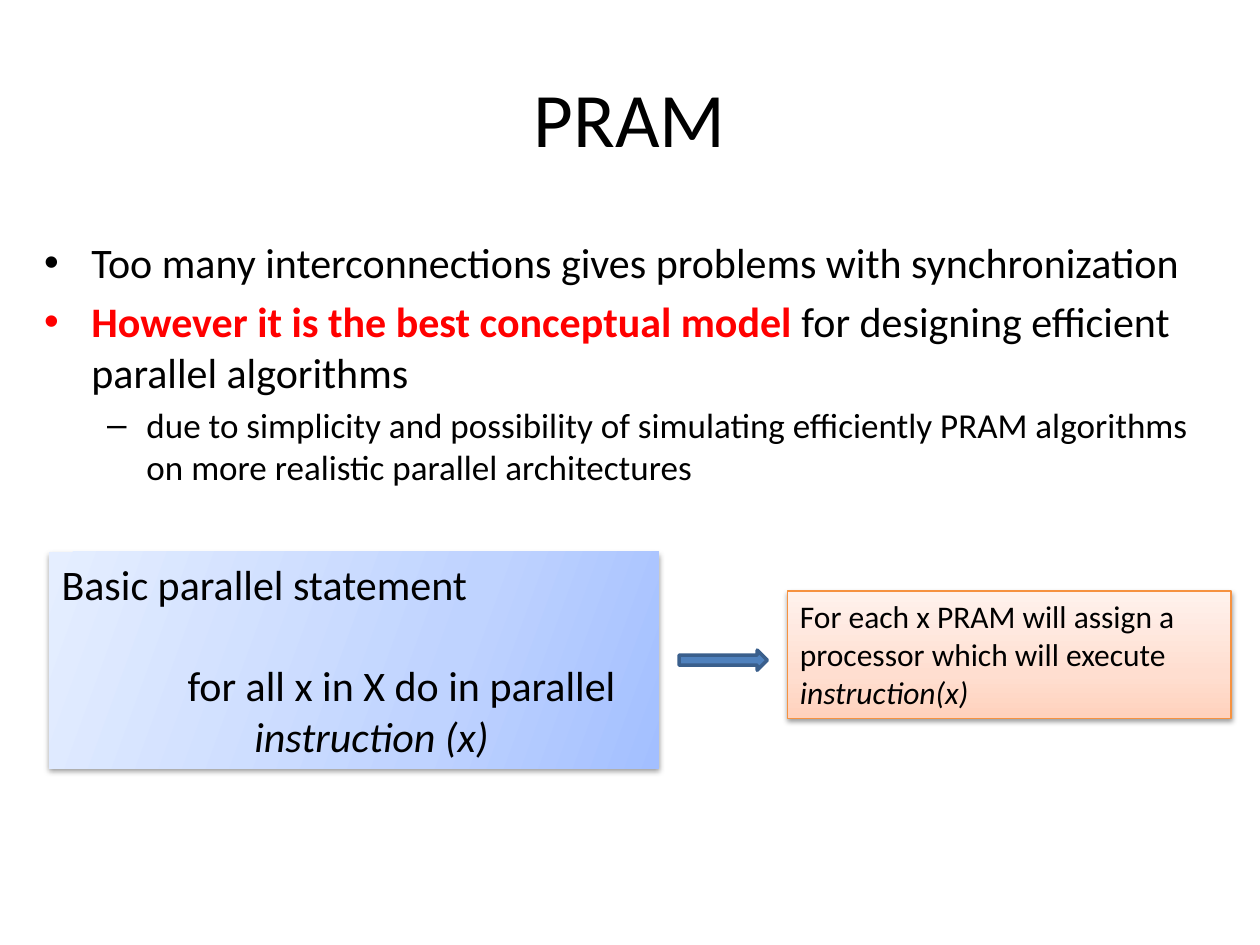
from lxml import etree
from pptx import Presentation
from pptx.dml.color import RGBColor
from pptx.enum import shapes, text
from pptx.oxml import ns
from pptx.util import Inches, Pt

BLACK = RGBColor(0x00, 0x00, 0x00)
RED = RGBColor(0xFF, 0x00, 0x00)
BLUE = RGBColor(0x4F, 0x81, 0xBD)
DARK_BLUE = RGBColor(0x3A, 0x5F, 0x8C)
ORANGE = RGBColor(0xF6, 0x92, 0x40)
BLUE_STOPS = [(0, RGBColor(0xE5, 0xEE, 0xFF)), (65, RGBColor(0xBF, 0xD3, 0xFF)),
              (100, RGBColor(0xA3, 0xBF, 0xFF))]
ORANGE_STOPS = [(0, RGBColor(0xFF, 0xD2, 0xBD)), (35, RGBColor(0xFF, 0xDE, 0xD0)),
                (100, RGBColor(0xFF, 0xF2, 0xED))]


def add_runs(p, size, *runs):
    """Add (wording, format values) runs to a paragraph."""
    for wording, values in runs:
        r = p.add_run()
        r.text = wording
        r.font.color.rgb = values.get("color", BLACK)
        for name, value in {"name": "Calibri", "size": Pt(size), **values}.items():
            if name != "color":
                setattr(r.font, name, value)


def shade(sp, stops, angle):
    """Give a shape a gradient of several stops and a soft shadow below."""
    sp.fill.gradient()
    grad = sp.fill._xPr.find(ns.qn("a:gradFill"))
    stop_list = grad.find(ns.qn("a:gsLst"))
    for old in list(stop_list):
        stop_list.remove(old)
    for position, color in stops:
        gs = etree.SubElement(stop_list, ns.qn("a:gs"), pos=str(position * 1000))
        etree.SubElement(gs, ns.qn("a:srgbClr"), val=str(color))
    lin = grad.find(ns.qn("a:lin"))
    lin.set("ang", str(angle * 60000))
    lin.set("scaled", "0")

    sp.shadow.inherit = False
    effects = sp._element.spPr.find(ns.qn("a:effectLst"))
    shadow = etree.SubElement(effects, ns.qn("a:outerShdw"), blurRad=str(Pt(3.1)),
                              dist=str(Pt(1.6)), dir="5400000", rotWithShape="0")
    color = etree.SubElement(shadow, ns.qn("a:srgbClr"), val=str(BLACK))
    etree.SubElement(color, ns.qn("a:alpha"), val="38000")


prs = Presentation()
prs.slide_width, prs.slide_height = Inches(10), Inches(7.5)
s = prs.slides.add_slide(prs.slide_layouts[1])

title, body = s.placeholders
for sp, box in ((title, (0.5, 0.3, 9, 1.25)), (body, (0.25, 1.83, 9.42, 4.83))):
    sp.left, sp.top, sp.width, sp.height = map(Inches, box)
add_runs(title.text_frame.paragraphs[0], 44, ("PRAM", {}))

bullets = [
    (0, 24, [("Too many interconnections gives problems with synchronization", {})]),
    (0, 24, [("However it is the best conceptual model", {"bold": True, "color": RED}),
             (" for designing efficient parallel algorithms", {})]),
    (1, 20, [("due to simplicity and possibility of simulating efficiently PRAM "
              "algorithms on more realistic parallel architectures", {})]),
]
tf = body.text_frame
for i, (level, size, runs) in enumerate(bullets):
    p = tf.add_paragraph() if i else tf.paragraphs[0]
    p.level = level
    add_runs(p, size, *runs)

# Parallel statement: indent in inches, space before in points
statement = s.shapes.add_textbox(Inches(0.39), Inches(4.38), Inches(4.84), Inches(1.72))
shade(statement, BLUE_STOPS, 20)
tf = statement.text_frame
tf.word_wrap = True
lines = [
    ("Basic parallel statement", 0, 0, {}),
    ("for all x in X do in parallel", 1, 29.3, {}),
    ("instruction (x)", 1.53, 0, {"italic": True}),
]
for i, (wording, indent, before, values) in enumerate(lines):
    p = tf.add_paragraph() if i else tf.paragraphs[0]
    p.space_before = Pt(before)
    p._p.get_or_add_pPr().set("marL", str(Inches(indent)))
    add_runs(p, 24, (wording, values))

meaning = s.shapes.add_shape(shapes.MSO_SHAPE.RECTANGLE, Inches(6.25), Inches(4.69),
                             Inches(3.52), Inches(1.01))
shade(meaning, ORANGE_STOPS, 270)
meaning.line.color.rgb = ORANGE
meaning.line.width = Pt(0.75)
tf = meaning.text_frame
tf.word_wrap = True
tf.vertical_anchor = text.MSO_ANCHOR.TOP
p = tf.paragraphs[0]
p.alignment = text.PP_ALIGN.LEFT
add_runs(p, 18, ("For each x PRAM will assign a processor which will execute ", {}),
         ("instruction(x)", {"italic": True}))

arrow = s.shapes.add_shape(shapes.MSO_SHAPE.RIGHT_ARROW, Inches(5.39), Inches(5.16),
                           Inches(0.7), Inches(0.16))
arrow.shadow.inherit = False
arrow.fill.solid()
arrow.fill.fore_color.rgb = BLUE
arrow.line.color.rgb = DARK_BLUE
arrow.line.width = Pt(2)

prs.save("out.pptx")
